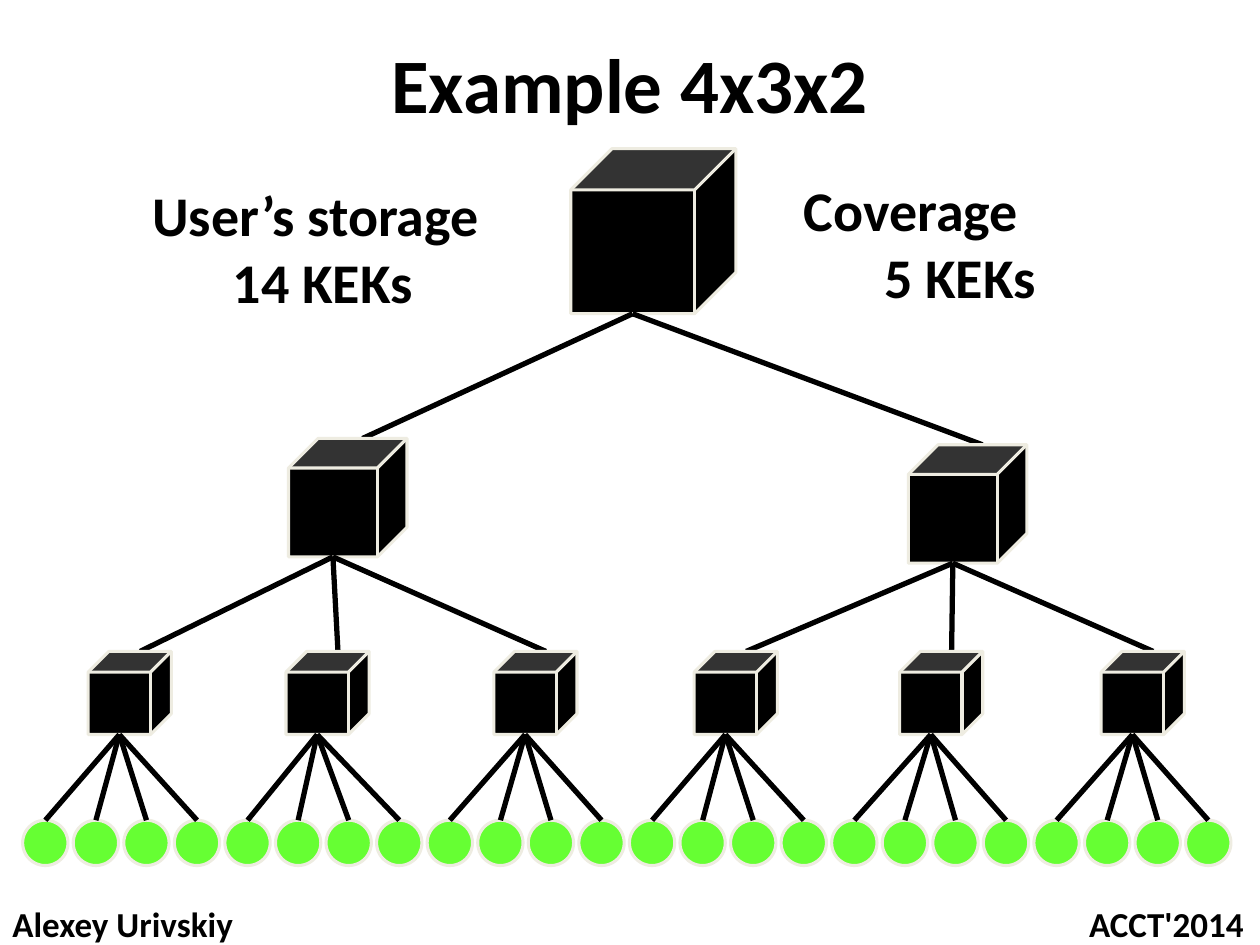
from pptx import Presentation
from pptx.dml.color import RGBColor
from pptx.enum.shapes import MSO_CONNECTOR, MSO_SHAPE
from pptx.enum.text import MSO_ANCHOR, PP_ALIGN
from pptx.oxml.ns import qn
from pptx.util import Inches, Pt
from lxml.etree import SubElement

BLACK, GREEN, CREAM = "000000", "66FF33", "EEECE1"
ROOT_CUBE = (4.53, 1.18, 1.31)
# Each middle cube (left, top, size) with the left edges of its three children
BRANCHES = [
    ((2.29, 3.48, 0.94), (0.7, 2.27, 3.92)),
    ((7.21, 3.53, 0.94), (5.51, 7.14, 8.74)),
]
SMALL_TOP, SMALL_SIZE = 5.17, 0.66
LEAVES_PER_CUBE = 4
LEAF_LEFT, LEAF_TOP, LEAF_SIZE = 0.18, 6.51, 0.36
LEAF_STEP = (9.41 - LEAF_LEFT) / 23
CUBE_DEPTH = 0.25


def color(hex_string):
    return RGBColor.from_string(hex_string)


def add_node(slide, preset, left, top, size, fill):
    shape = slide.shapes.add_shape(
        preset, Inches(left), Inches(top), Inches(size), Inches(size))
    shape.shadow.inherit = False
    shape.fill.solid()
    shape.fill.fore_color.rgb = color(fill)
    shape.line.color.rgb = color(CREAM)
    shape.line.width = Pt(1.75)
    return shape


def add_cube(slide, cube):
    shape = add_node(slide, MSO_SHAPE.CUBE, *cube, BLACK)
    shape.adjustments[0] = CUBE_DEPTH


def front_bottom(cube):
    """Middle of the lower edge of the cube's front face."""
    left, top, size = cube
    return left + size * (1 - CUBE_DEPTH) / 2, top + size


def back_top(cube):
    """Middle of the upper edge of the cube's lid."""
    left, top, size = cube
    return left + size * (1 + CUBE_DEPTH) / 2, top


def add_branch(slide, start, end):
    connector = slide.shapes.add_connector(
        MSO_CONNECTOR.STRAIGHT, *(Inches(value) for value in (*start, *end)))
    connector.line.color.rgb = color(BLACK)
    connector.line.width = Pt(3)
    SubElement(connector._element.spPr, qn("a:effectLst"))
    return connector


def add_leaves(slide, cube, first_index):
    for index in range(first_index, first_index + LEAVES_PER_CUBE):
        left = LEAF_LEFT + index * LEAF_STEP
        leaf = add_node(slide, MSO_SHAPE.OVAL, left, LEAF_TOP, LEAF_SIZE, GREEN)
        branch = add_branch(slide, front_bottom(cube), (left + LEAF_SIZE / 2, LEAF_TOP))
        branch.end_connect(leaf, 0)


def add_text(slide, box, lines, size, align=PP_ALIGN.LEFT,
             anchor=MSO_ANCHOR.MIDDLE, hanging=0):
    """Add one bold paragraph; lines after the first start at the hanging indent."""
    text_frame = slide.shapes.add_textbox(*(Inches(value) for value in box)).text_frame
    text_frame.word_wrap = True
    text_frame.vertical_anchor = anchor
    paragraph = text_frame.paragraphs[0]
    paragraph.alignment = align
    if hanging:
        properties = paragraph._p.get_or_add_pPr()
        properties.set("marL", str(Inches(hanging)))
        properties.set("indent", str(-Inches(hanging)))
    for index, line in enumerate(lines):
        if index:
            paragraph.add_line_break()
        run = paragraph.add_run()
        run.text = line
        run.font.name = "Calibri"
        run.font.size = Pt(size)
        run.font.bold = True
        run.font.color.rgb = color(BLACK)


def add_tree(slide):
    add_cube(slide, ROOT_CUBE)
    leaf_index = 0
    for middle_cube, child_lefts in BRANCHES:
        add_branch(slide, front_bottom(ROOT_CUBE), back_top(middle_cube))
        add_cube(slide, middle_cube)
        for left in child_lefts:
            small_cube = (left, SMALL_TOP, SMALL_SIZE)
            add_branch(slide, front_bottom(middle_cube), back_top(small_cube))
            add_cube(slide, small_cube)
            add_leaves(slide, small_cube, leaf_index)
            leaf_index += LEAVES_PER_CUBE


def main():
    presentation = Presentation()
    presentation.slide_width = Inches(10)
    presentation.slide_height = Inches(7.5)
    slide = presentation.slides.add_slide(presentation.slide_layouts[6])

    add_tree(slide)
    add_text(slide, (0, 0.25, 10, 0.82), ["Example 4x3x2"], 44, PP_ALIGN.CENTER)
    for left, top, lines in [
        (1.11, 1.38, ["User’s storage", "14 KEKs"]),
        (6.28, 1.34, ["Coverage", "5 KEKs"]),
    ]:
        add_text(slide, (left, top, 3.74, 1.18), lines, 32,
                 anchor=MSO_ANCHOR.TOP, hanging=0.64)
    add_text(slide, (0, 7.13, 5, 0.4), ["Alexey Urivskiy"], 20)
    add_text(slide, (5, 7.13, 4.97, 0.4), ["ACCT'2014"], 20, PP_ALIGN.RIGHT)

    presentation.save("out.pptx")


if __name__ == "__main__":
    main()
